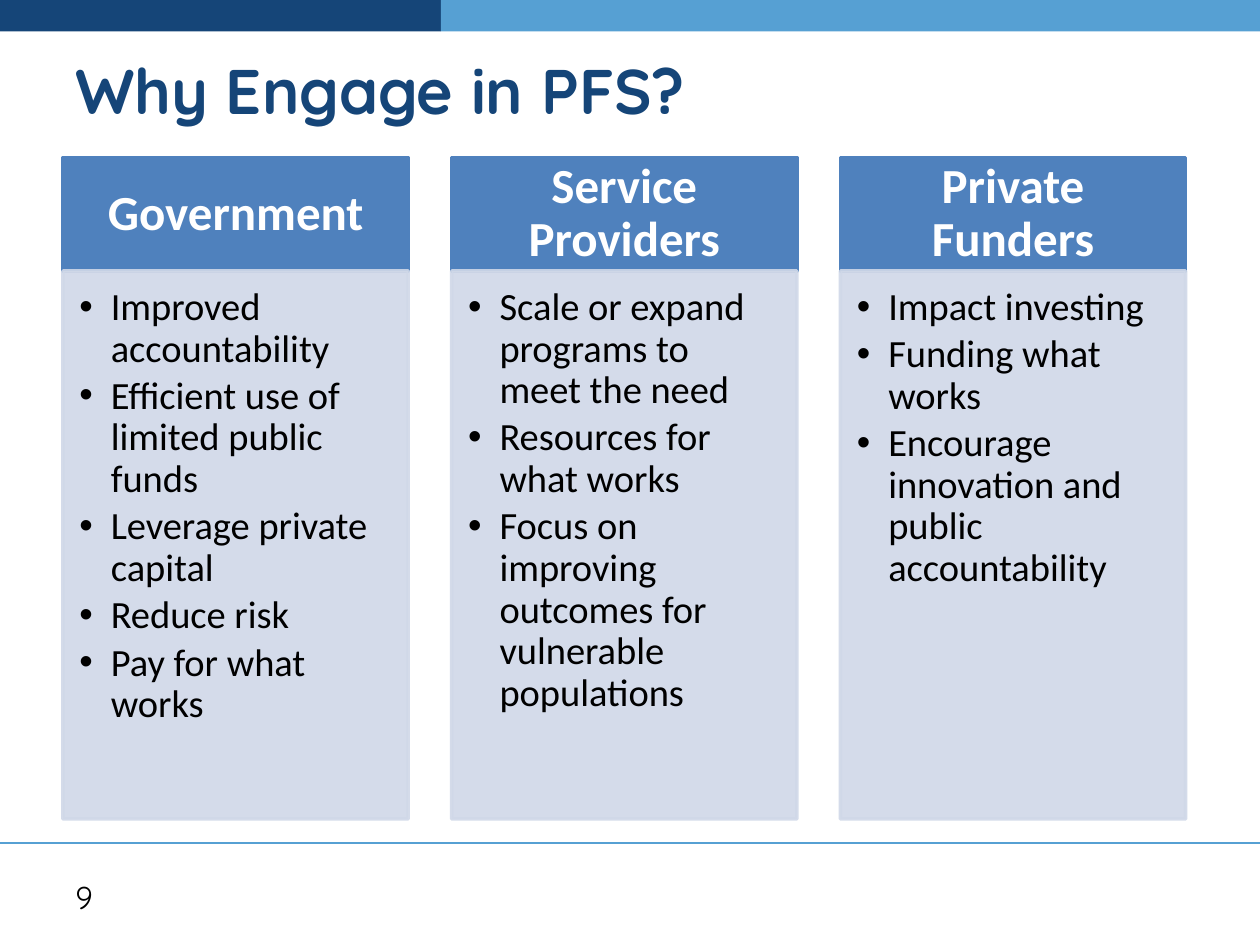
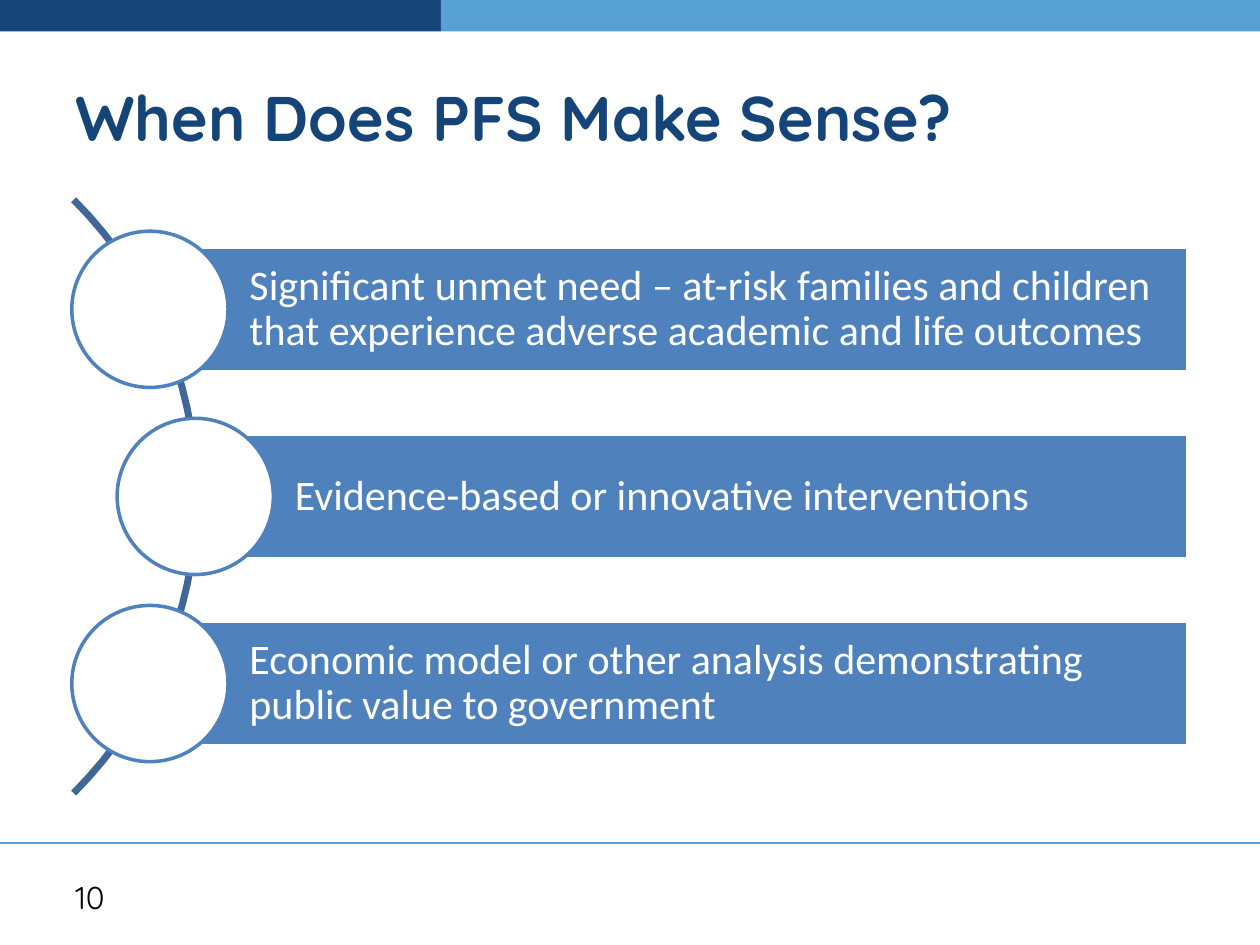
import math
from dataclasses import dataclass

from lxml import etree
from pptx import Presentation
from pptx import util as u
from pptx.dml.color import RGBColor
from pptx.enum import shapes, text
from pptx.oxml.ns import qn


@dataclass(frozen=True)
class Theme:
    navy: str = "154578"
    sky: str = "56A0D3"
    blue: str = "4F81BD"
    arc: str = "3F6797"
    pale: str = "D0D8E8"
    white: str = "FFFFFF"
    black: str = "000000"
    heading_font: str = "Quicksand"
    body_font: str = "Calibri"
    title: int = 36
    column_head: int = 28
    criterion: int = 24
    bullet: int = 22
    page: int = 18


theme = Theme()
preset = shapes.MSO_SHAPE
middle = text.MSO_ANCHOR.MIDDLE


def add_box(slide, kind, at, fill, line=None):
    box = slide.shapes.add_shape(kind, *map(u.Inches, at))
    box.shadow.inherit = False
    box.fill.solid()
    box.fill.fore_color.rgb = RGBColor.from_string(fill)
    if line:
        box.line.color.rgb = RGBColor.from_string(line)
        box.line.width = u.Pt(2)
    else:
        box.line.fill.background()
    return box


def write(shape, lines, size, color, font=theme.body_font, bold=False, spacing=0.9,
          align=text.PP_ALIGN.LEFT, anchor=middle, insets=(0.1, 0.05, 0.1, 0.05), bullets=False):
    """Fill a shape with one paragraph per line; insets are left, top, right, bottom."""
    frame = shape.text_frame
    frame.word_wrap = True
    frame.vertical_anchor = anchor
    for side, inset in zip(("left", "top", "right", "bottom"), insets):
        setattr(frame, f"margin_{side}", u.Inches(inset))
    run_format = {"name": font, "size": u.Pt(size), "bold": bold}
    for i, line in enumerate(lines):
        paragraph = frame.add_paragraph() if i else frame.paragraphs[0]
        if bullets:
            props = paragraph._p.get_or_add_pPr()
            props.set("marL", str(u.Inches(0.25)))
            props.set("indent", str(-u.Inches(0.25)))
            etree.SubElement(props, qn("a:buFont"), typeface="Arial")
            etree.SubElement(props, qn("a:buChar"), char="•")
            paragraph.space_after = u.Pt(0.15 * size)
        paragraph.alignment = align
        paragraph.line_spacing = spacing
        run = paragraph.add_run()
        run.text = line
        for name, value in run_format.items():
            setattr(run.font, name, value)
        run.font.color.rgb = RGBColor.from_string(color)


prs = Presentation()
prs.slide_width, prs.slide_height = u.Inches(10), u.Inches(7.5)

# Shared frame: footer rule, top bands, title and page number
titles = [
    ("Why Engage in PFS?", 0.17, 1.08),
    ("When Does PFS Make Sense?", 0.3, 1.25),
]
slides = []
for page, (title, top, height) in enumerate(titles, start=9):
    slide = prs.slides.add_slide(prs.slide_layouts[6])
    slides.append(slide)
    rule = slide.shapes.add_connector(
        shapes.MSO_CONNECTOR.STRAIGHT, *map(u.Inches, (0, 6.69, 10, 6.69)))
    rule.line.color.rgb = RGBColor.from_string(theme.sky)
    rule.line.width = u.Pt(1.5)
    etree.SubElement(rule._element.spPr, qn("a:effectLst"))
    add_box(slide, preset.RECTANGLE, (0, 0, 3.5, 0.25), theme.navy)
    add_box(slide, preset.RECTANGLE, (3.5, 0, 6.5, 0.25), theme.sky)
    for line, at, size, color, bold in (
        (title, (0.5, top, 9, height), theme.title, theme.navy, True),
        (str(page), (0.5, 6.92, 2.33, 0.4), theme.page, theme.black, False),
    ):
        write(slide.shapes.add_textbox(*map(u.Inches, at)), [line], size, color,
              theme.heading_font, bold, spacing=1.0)

reasons_slide, criteria_slide = slides

# Reasons to engage: one column per partner
reasons = {
    "Government": [
        "Improved accountability",
        "Efficient use of limited public funds",
        "Leverage private capital",
        "Reduce risk",
        "Pay for what works",
    ],
    "Service Providers": [
        "Scale or expand programs to meet the need",
        "Resources for what works",
        "Focus on improving outcomes for vulnerable populations",
    ],
    "Private Funders": [
        "Impact investing",
        "Funding what works",
        "Encourage innovation and public accountability",
    ],
}
column_width, column_pitch = 2.74, 6.17 / 2
for i, (partner, benefits) in enumerate(reasons.items()):
    left = 0.5 + i * column_pitch
    head = add_box(reasons_slide, preset.RECTANGLE, (left, 1.25, column_width, 0.9),
                   theme.blue, theme.blue)
    write(head, [partner], theme.column_head, theme.white, bold=True,
          align=text.PP_ALIGN.CENTER, insets=(0.22, 0.12, 0.22, 0.12))
    panel = add_box(reasons_slide, preset.RECTANGLE, (left, 2.15, column_width, 4.35),
                    theme.pale, theme.pale)
    for color in panel._element.spPr.iter(qn("a:srgbClr")):
        etree.SubElement(color, qn("a:alpha"), val="90000")
    write(panel, benefits, theme.bullet, theme.black, anchor=text.MSO_ANCHOR.TOP,
          insets=(0.13, 0.13, 0.17, 0.19), bullets=True)

# Criteria strung along a quarter-circle arc
center_x, center_y, radius = -1.77, 3.94, 3.33
arc_points = [
    (u.Inches(center_x + radius * math.cos(math.radians(angle))),
     u.Inches(center_y + radius * math.sin(math.radians(angle))))
    for angle in range(-45, 46, 3)
]
outline = criteria_slide.shapes.build_freeform(*arc_points[0])
outline.add_line_segments(arc_points[1:], close=False)
arc = outline.convert_to_shape()
arc.shadow.inherit = False
arc.fill.background()
arc.line.color.rgb = RGBColor.from_string(theme.arc)
arc.line.width = u.Pt(4)

criteria = [
    (1.19, "Significant unmet need – at-risk families and children that experience "
           "adverse academic and life outcomes"),
    (1.55, "Evidence-based or innovative interventions"),
    (1.19, "Economic model or other analysis demonstrating public value to government"),
]
bar_right, bar_height, bar_pitch, disc = 9.43, 0.99, 2.97 / 2, 1.24
for i, (left, criterion) in enumerate(criteria):
    top = 1.96 + i * bar_pitch
    bar = add_box(criteria_slide, preset.RECTANGLE, (left, top, bar_right - left, bar_height),
                  theme.blue, theme.white)
    write(bar, [criterion], theme.criterion, theme.white, insets=(0.79, 0.07, 0.07, 0.07))
    add_box(criteria_slide, preset.OVAL,
            (left - disc / 2, top + (bar_height - disc) / 2, disc, disc),
            theme.white, theme.blue)

prs.save("out.pptx")
